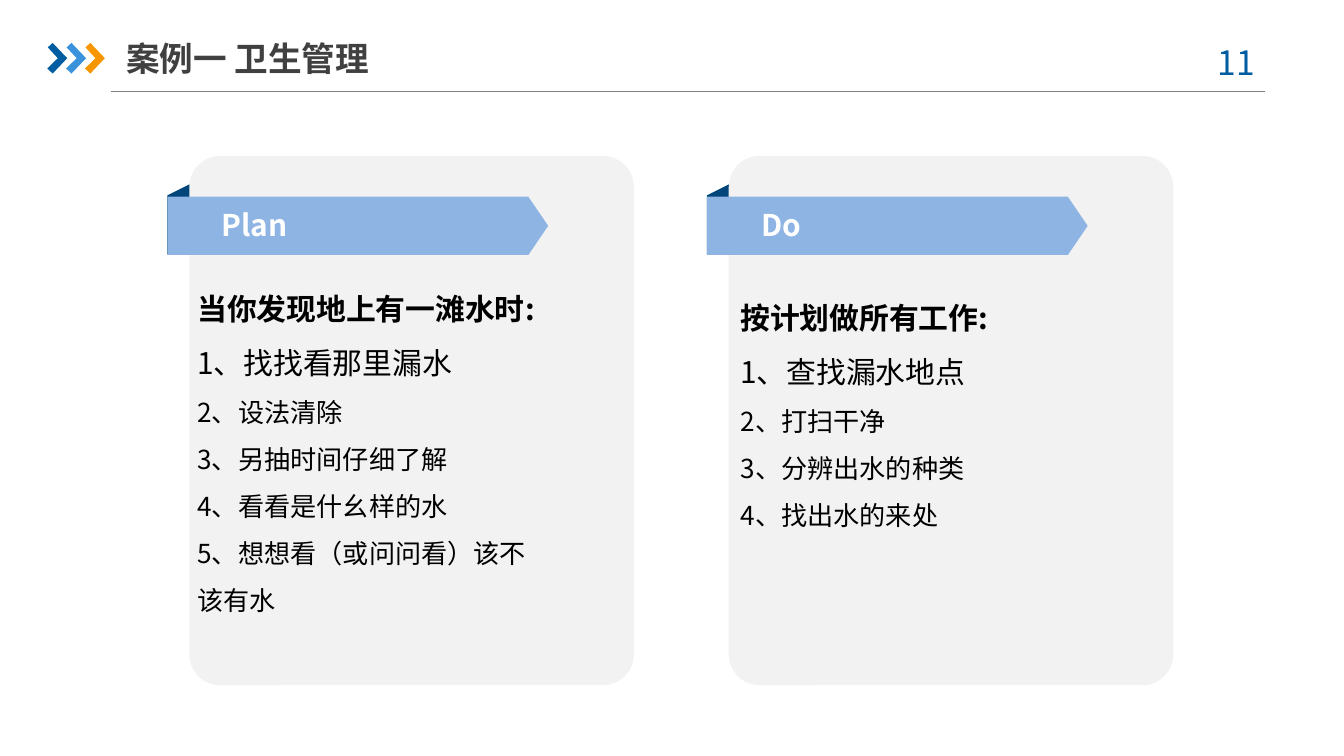
from pptx import Presentation
from pptx.dml.color import RGBColor
from pptx.enum.shapes import MSO_CONNECTOR as Connector, MSO_SHAPE as Shape
from pptx.enum.text import MSO_ANCHOR as Anchor, PP_ALIGN as Align
from pptx.oxml.ns import qn
from pptx.util import Pt
from lxml.etree import SubElement

FONT = "Noto Sans CJK SC"
NAVY = RGBColor(0x00, 0x5D, 0xA2)
BLUE = RGBColor(0x39, 0x92, 0xDB)
ORANGE = RGBColor(0xF7, 0x96, 0x00)
FOLD_BLUE = RGBColor(0x00, 0x46, 0x7A)
RIBBON_BLUE = RGBColor(0x8E, 0xB4, 0xE3)
CARD_GRAY = RGBColor(0xF2, 0xF2, 0xF2)
RULE_GRAY = RGBColor(0x80, 0x80, 0x80)
TITLE_GRAY = RGBColor(0x40, 0x40, 0x40)
BLACK = RGBColor(0, 0, 0)
WHITE = RGBColor(0xFF, 0xFF, 0xFF)

CHEVRON = [(25.6, 25.4), (28.2, 23), (36, 31.2), (28.2, 39.4), (25.3, 36.7), (31, 31.2)]
CHEVRON_STEP = 10.1
CARD_LEFT, CARD_TOP, CARD_STEP = 101.4, 83.5, 289

PLAN = [
    ("当你发现地上有一滩水时:", 16, True),
    ("1、找找看那里漏水", 16, False),
    ("2、设法清除", 14, False),
    ("3、另抽时间仔细了解", 14, False),
    ("4、看看是什幺样的水", 14, False),
    ("5、想想看（或问问看）该不", 14, False),
    ("该有水", 14, False),
]
DO = [
    ("按计划做所有工作:", 16, True),
    ("1、查找漏水地点", 16, False),
    ("2、打扫干净", 14, False),
    ("3、分辨出水的种类", 14, False),
    ("4、找出水的来处", 14, False),
]


def paint(shape, color):
    shape.shadow.inherit = False
    shape.fill.solid()
    shape.fill.fore_color.rgb = color
    shape.line.fill.background()


def add_block(slide, kind, box, color):
    block = slide.shapes.add_shape(kind, *map(Pt, box))
    paint(block, color)
    return block


def add_text(slide, box, lines, color, align=Align.LEFT, spacing=None,
             anchor=Anchor.TOP, insets=(0, 0)):
    frame = slide.shapes.add_textbox(*map(Pt, box)).text_frame
    frame.word_wrap = True
    frame.vertical_anchor = anchor
    frame.margin_left = frame.margin_right = Pt(insets[0])
    frame.margin_top = frame.margin_bottom = Pt(insets[1])
    for index, (words, size, bold) in enumerate(lines):
        paragraph = frame.add_paragraph() if index else frame.paragraphs[0]
        paragraph.text = words
        paragraph.alignment = align
        paragraph.line_spacing = spacing
        font = paragraph.font
        font.name, font.size, font.bold = FONT, Pt(size), bold
        font.color.rgb = color
        defaults = paragraph._p.pPr.find(qn("a:defRPr"))
        SubElement(defaults, qn("a:ea")).set("typeface", FONT)


def add_chevron(slide, shift, color):
    points = [(Pt(x + shift), Pt(y)) for x, y in CHEVRON]
    builder = slide.shapes.build_freeform(*points[0])
    builder.add_line_segments(points[1:], close=True)
    paint(builder.convert_to_shape(), color)


def add_header(slide, title, number):
    rule = slide.shapes.add_connector(Connector.STRAIGHT, Pt(59.6), Pt(49.2), Pt(677.6), Pt(49.2))
    rule.line.color.rgb = RULE_GRAY
    rule.line.width = Pt(0.75)
    SubElement(rule._element.spPr, qn("a:effectLst"))
    for index, color in enumerate((NAVY, BLUE, ORANGE)):
        add_chevron(slide, index * CHEVRON_STEP, color)
    add_text(slide, (636, 18.7, 52.5, 29), [(number, 18, False)], NAVY,
             align=Align.CENTER, insets=(7.2, 3.6))
    add_text(slide, (67.7, 15.8, 168, 30.2), [(title, 18, True)], TITLE_GRAY,
             anchor=Anchor.MIDDLE, insets=(0, 3.6))


def add_card(slide, left, heading, lines, body_left, body_top):
    fold = add_block(slide, Shape.FLOWCHART_DATA, (left - 23.7, 108.7, 39.6, 15.8), FOLD_BLUE)
    fold.rotation = 270
    fold._element.spPr.xfrm.set("flipH", "1")
    card = add_block(slide, Shape.ROUNDED_RECTANGLE, (left, CARD_TOP, 238.2, 283.6), CARD_GRAY)
    card.adjustments[0] = 0.07
    ribbon = add_block(slide, Shape.PENTAGON, (left - 11.5, 105.4, 203.8, 31.2), RIBBON_BLUE)
    ribbon.adjustments[0] = 0.34
    add_text(slide, (left + 17.3, 110.9, 134, 19.4), [(heading, 16, True)], WHITE)
    add_text(slide, (body_left, body_top, 198.7, 210), lines, BLACK,
             align=Align.JUSTIFY, spacing=1.5)


def main():
    deck = Presentation()
    deck.slide_width, deck.slide_height = Pt(720), Pt(405)
    slide = deck.slides.add_slide(deck.slide_layouts[6])
    add_header(slide, "案例一 卫生管理", "11")
    add_card(slide, CARD_LEFT, "Plan", PLAN, 105.8, 146.2)
    add_card(slide, CARD_LEFT + CARD_STEP, "Do", DO, 396.7, 151)
    deck.save("out.pptx")


if __name__ == "__main__":
    main()
